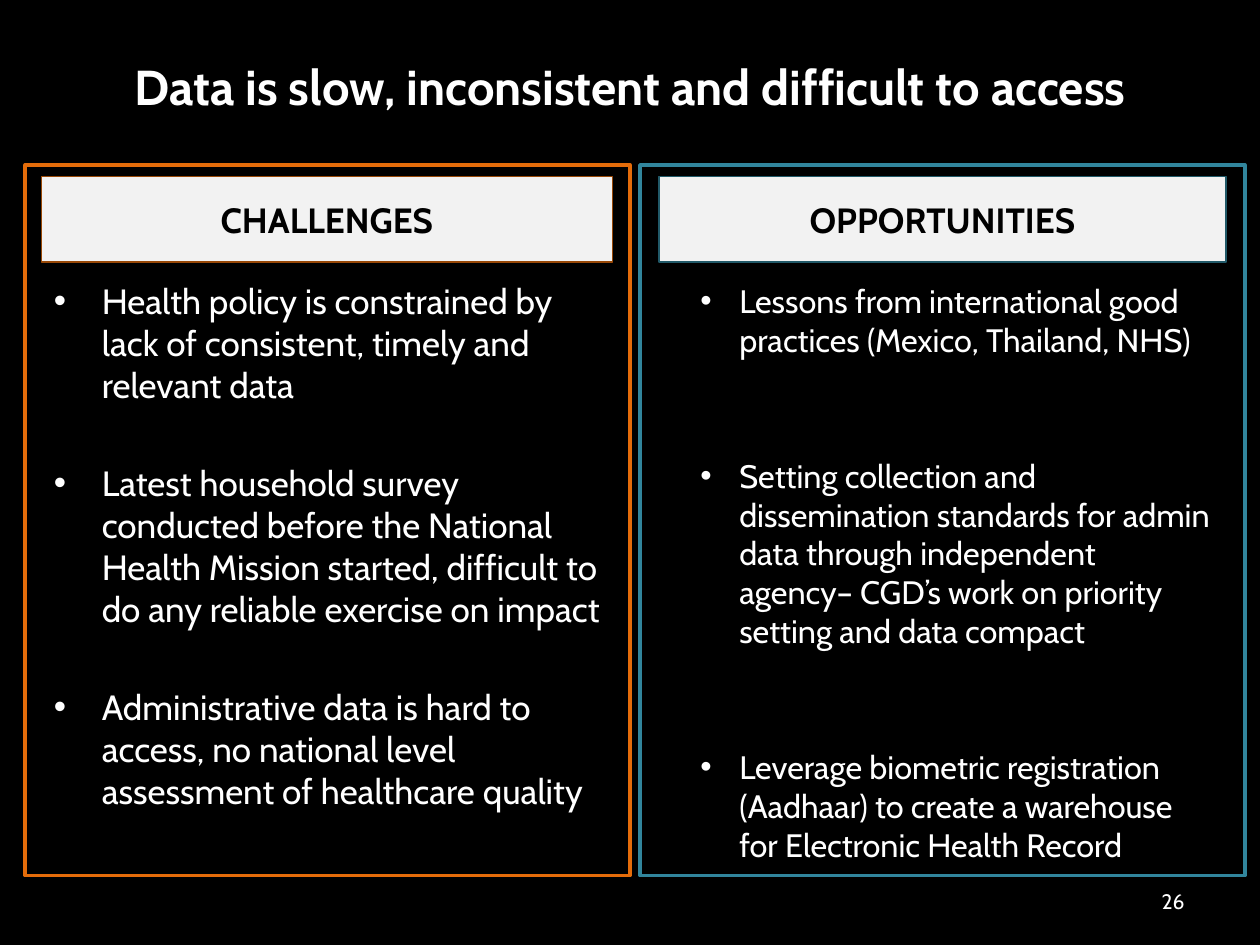
"""Builds a two-column slide on challenges and opportunities in health data."""
import pptx
import pptx.dml.color
import pptx.enum.shapes
import pptx.enum.text
import pptx.oxml.ns
import pptx.util
from lxml import etree

Inches = pptx.util.Inches
Pt = pptx.util.Pt
ALIGN = pptx.enum.text.PP_ALIGN
ANCHOR = pptx.enum.text.MSO_ANCHOR

FONT = "Cabin"
COLORS = {
    "background": "000000",
    "text": "FFFFFF",
    "header_fill": "F2F2F2",
    "header_text": "000000",
    "orange": "E46C0A",
    "brown": "984807",
    "teal": "31859C",
    "dark_teal": "215968",
}
CHALLENGES = [
    "Health policy is constrained by lack of consistent, timely and relevant data",
    "Latest household survey conducted before the National Health Mission started, "
    "difficult to do any reliable exercise on impact",
    "Administrative data is hard to access, no national level assessment of healthcare quality",
]
OPPORTUNITIES = [
    "Lessons from international good practices (Mexico, Thailand, NHS)",
    "Setting collection and dissemination standards for admin data through independent "
    "agency– CGD’s work on priority setting and data compact",
    "Leverage biometric registration (Aadhaar) to create a warehouse for Electronic Health Record",
]


def color(name):
    return pptx.dml.color.RGBColor.from_string(COLORS[name])


def style_paragraph(para, size, color_name="text", bold=False, align=ALIGN.LEFT):
    para.alignment = align
    for span in para.runs:
        span.font.name = FONT
        span.font.size = Pt(size)
        span.font.bold = bold
        span.font.color.rgb = color(color_name)


def add_text_box(page, left, top, width, height, anchor=ANCHOR.TOP):
    box = page.shapes.add_textbox(Inches(left), Inches(top), Inches(width), Inches(height))
    box.text_frame.word_wrap = True
    box.text_frame.vertical_anchor = anchor
    return box


def add_label(page, text, left, top, width, height, size, align, bold=False):
    box = add_text_box(page, left, top, width, height, ANCHOR.MIDDLE)
    box.text_frame.text = text
    style_paragraph(box.text_frame.paragraphs[0], size, bold=bold, align=align)


def add_bullet(para, margin, hanging):
    properties = para._p.get_or_add_pPr()
    properties.set("marL", str(Inches(margin)))
    properties.set("indent", str(-Inches(hanging)))
    for tag, key, value in (("a:buFont", "typeface", "Arial"), ("a:buChar", "char", "•")):
        etree.SubElement(properties, pptx.oxml.ns.qn(tag)).set(key, value)


def add_bullet_list(page, items, left, top, width, height, size, margin, hanging, gap):
    frame = add_text_box(page, left, top, width, height).text_frame
    frame.text = "\n".join(items)
    for index, para in enumerate(frame.paragraphs):
        add_bullet(para, margin, hanging)
        para.space_before = Pt(gap if index else 0)
        style_paragraph(para, size)


def add_rectangle(page, left, top, width, height, line, line_width, fill=None):
    box = page.shapes.add_shape(
        pptx.enum.shapes.MSO_SHAPE.RECTANGLE,
        Inches(left), Inches(top), Inches(width), Inches(height),
    )
    box.shadow.inherit = False
    if fill:
        box.fill.solid()
        box.fill.fore_color.rgb = color(fill)
    else:
        box.fill.background()
    box.line.color.rgb = color(line)
    box.line.width = Pt(line_width)
    return box


def add_header(page, text, left, width, line):
    box = add_rectangle(page, left, 1.4, width, 0.68, line, 0.75, "header_fill")
    frame = box.text_frame
    frame.margin_left = frame.margin_right = 0
    frame.vertical_anchor = ANCHOR.MIDDLE
    frame.text = text
    style_paragraph(frame.paragraphs[0], 20, "header_text", True, ALIGN.CENTER)


def main():
    deck = pptx.Presentation()
    deck.slide_width = Inches(10)
    deck.slide_height = Inches(7.5)
    page = deck.slides.add_slide(deck.slide_layouts[6])
    page.background.fill.solid()
    page.background.fill.fore_color.rgb = color("background")

    add_label(page, "Data is slow, inconsistent and difficult to access",
              0.5, 0.38, 9, 0.61, 28, ALIGN.CENTER, bold=True)
    add_bullet_list(page, CHALLENGES, 0.33, 2.17, 4.57, 4.44,
                    size=20, margin=0.38, hanging=0.38, gap=32)
    add_bullet_list(page, OPPORTUNITIES, 4.96, 2.18, 4.77, 4.76,
                    size=18.5, margin=0.81, hanging=0.31, gap=55.5)
    add_label(page, "26", 7.17, 6.95, 2.33, 0.4, 12, ALIGN.RIGHT)

    for left, line in ((0.2, "orange"), (5.08, "teal")):
        add_rectangle(page, left, 1.31, 4.8, 5.64, line, 2)
    add_header(page, "CHALLENGES", 0.33, 4.53, "brown")
    add_header(page, "OPPORTUNITIES", 5.23, 4.5, "dark_teal")
    deck.save("out.pptx")


if __name__ == "__main__":
    main()
